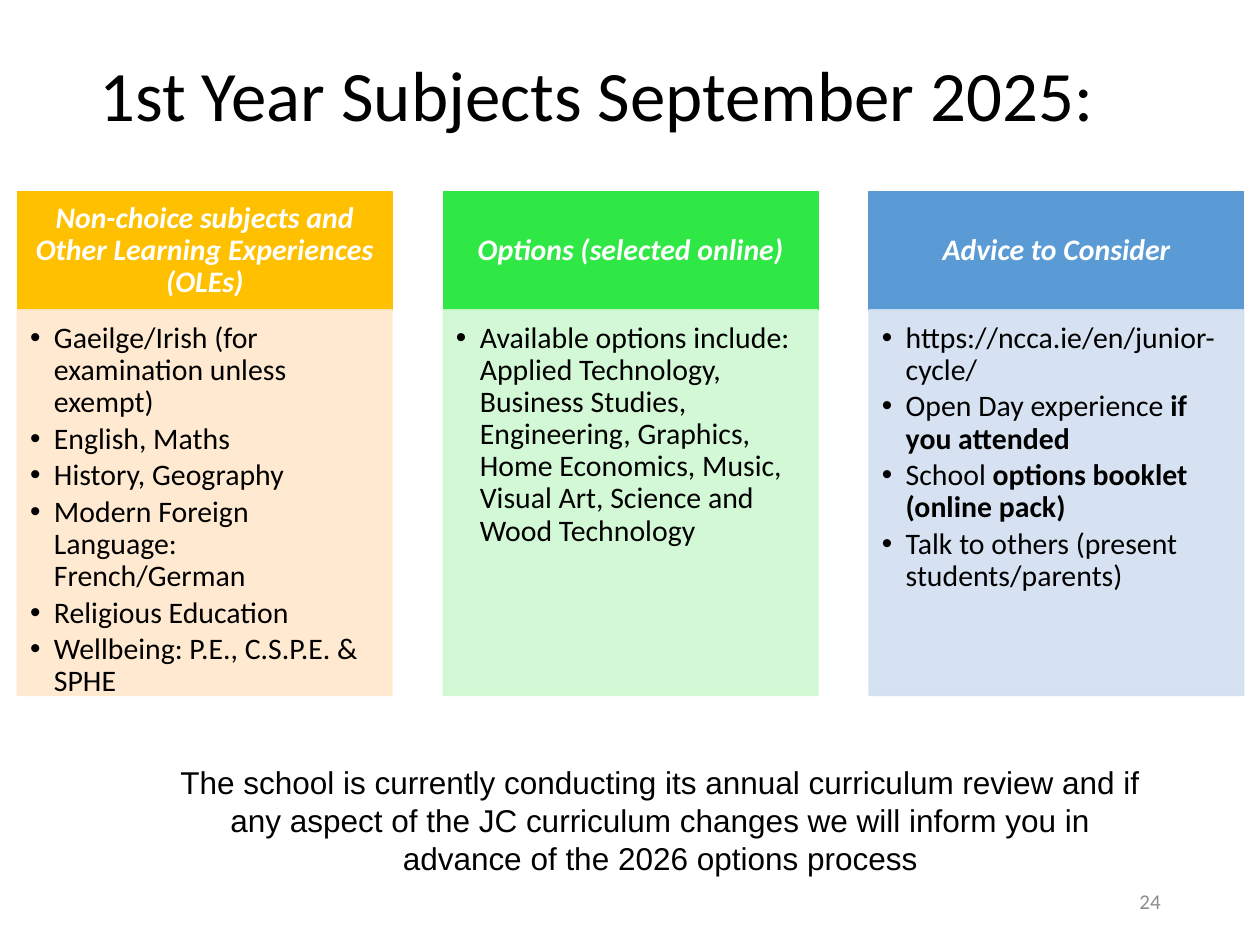
from lxml import etree
from pptx import Presentation
from pptx.dml.color import RGBColor
from pptx.enum.shapes import MSO_SHAPE
from pptx.enum.text import MSO_ANCHOR, PP_ALIGN
from pptx.oxml.ns import qn
from pptx.util import Inches, Pt

TITLE = "1st Year Subjects September 2025:"
NOTICE = ("The school is currently conducting its annual curriculum review and if any aspect "
          "of the JC curriculum changes we will inform you in advance of the 2026 options process")
PAGE_NUMBER = "24"

# Each bullet is a list of (wording, bold) pairs.
COLUMNS = [
    ("Non-choice subjects and Other Learning Experiences (OLEs)", "FFC000", "FFE8CC", [
        [("Gaeilge/Irish (for examination unless exempt)", False)],
        [("English, Maths", False)],
        [("History, Geography", False)],
        [("Modern Foreign Language: French/German", False)],
        [("Religious Education", False)],
        [("Wellbeing: P.E., C.S.P.E. & SPHE", False)],
    ]),
    ("Options (selected online)", "30E845", "CFF8D1", [
        [("Available options include: Applied Technology, Business Studies, Engineering, "
          "Graphics, Home Economics, Music, Visual Art, Science and Wood Technology", False)],
    ]),
    ("Advice to Consider", "5B9BD5", "D2DFF0", [
        [("https://ncca.ie/en/junior-cycle/", False)],
        [("Open Day experience", False), (" if you attended", True)],
        [("School ", False), ("options booklet (online pack)", True)],
        [("Talk to others (present students/parents)", False)],
    ]),
]

COLUMN_LEFT, COLUMN_STEP, COLUMN_WIDTH = 0.14, 3.38, 2.97
HEADER_TOP, HEADER_HEIGHT, LIST_HEIGHT = 1.52, 0.94, 3.06
BULLET_INDENT = 0.19


def rgb(code):
    return RGBColor.from_string(code)


def set_font(paragraph, size, color="000000", name="Calibri"):
    paragraph.font.size = Pt(size)
    paragraph.font.name = name
    paragraph.font.color.rgb = rgb(color)


def set_frame(shape, insets, anchor):
    frame = shape.text_frame
    frame.word_wrap = True
    frame.vertical_anchor = anchor
    frame.margin_left, frame.margin_top, frame.margin_right, frame.margin_bottom = map(Inches, insets)
    return frame


def add_text(slide, box, text, size, anchor, align, color="000000", name="Calibri"):
    shape = slide.shapes.add_textbox(*map(Inches, box))
    paragraph = set_frame(shape, (0.1, 0.05, 0.1, 0.05), anchor).paragraphs[0]
    paragraph.text = text
    paragraph.alignment = align
    set_font(paragraph, size, color, name)
    return paragraph


def add_panel(slide, box, color, opacity=100):
    panel = slide.shapes.add_shape(MSO_SHAPE.RECTANGLE, *map(Inches, box))
    panel.shadow.inherit = False
    panel.fill.solid()
    panel.fill.fore_color.rgb = rgb(color)
    panel.line.color.rgb = rgb(color)
    panel.line.width = Pt(1)
    if opacity < 100:
        for tint in panel.fill._xPr.iter(qn("a:srgbClr")):
            etree.SubElement(tint, qn("a:alpha"), val=str(opacity * 1000))
    return panel


def add_bullet(paragraph):
    properties = paragraph._p.get_or_add_pPr()
    properties.set("marL", str(Inches(BULLET_INDENT)))
    properties.set("indent", str(-Inches(BULLET_INDENT)))
    etree.SubElement(properties, qn("a:buFont"), typeface="Arial")
    etree.SubElement(properties, qn("a:buChar"), char="•")


def add_column(slide, left, heading, header_color, list_color, bullets):
    header = add_panel(slide, (left, HEADER_TOP, COLUMN_WIDTH, HEADER_HEIGHT), header_color)
    title = set_frame(header, (0.13, 0.08, 0.13, 0.08), MSO_ANCHOR.MIDDLE).paragraphs[0]
    title.text = heading
    title.alignment = PP_ALIGN.CENTER
    title.line_spacing = 0.9
    set_font(title, 17, "FFFFFF")
    title.font.bold = title.font.italic = True

    list_top = HEADER_TOP + HEADER_HEIGHT
    body = add_panel(slide, (left, list_top, COLUMN_WIDTH, LIST_HEIGHT), list_color, 90)
    frame = set_frame(body, (0.1, 0.1, 0.13, 0.15), MSO_ANCHOR.TOP)
    for index, pieces in enumerate(bullets):
        item = frame.add_paragraph() if index else frame.paragraphs[0]
        item.alignment = PP_ALIGN.LEFT
        item.line_spacing = 0.9
        item.space_after = Pt(2.55)
        add_bullet(item)
        set_font(item, 17)
        for wording, bold in pieces:
            run = item.add_run()
            run.text = wording
            if bold:
                run.font.bold = True


def main():
    deck = Presentation()
    deck.slide_width, deck.slide_height = Inches(10), Inches(7.5)
    slide = deck.slides.add_slide(deck.slide_layouts[6])

    title = add_text(slide, (0.69, 0.43, 8.62, 0.71), TITLE, 40.5, MSO_ANCHOR.MIDDLE, PP_ALIGN.LEFT)
    title.line_spacing = 0.9
    add_text(slide, (7.06, 6.95, 2.25, 0.4), PAGE_NUMBER, 12, MSO_ANCHOR.MIDDLE, PP_ALIGN.RIGHT, "8C8C8C")
    for index, column in enumerate(COLUMNS):
        add_column(slide, COLUMN_LEFT + index * COLUMN_STEP, *column)
    add_text(slide, (1.31, 6.01, 7.86, 1.01), NOTICE, 18, MSO_ANCHOR.TOP, PP_ALIGN.CENTER, name="Arial")

    deck.save("out.pptx")


if __name__ == "__main__":
    main()
